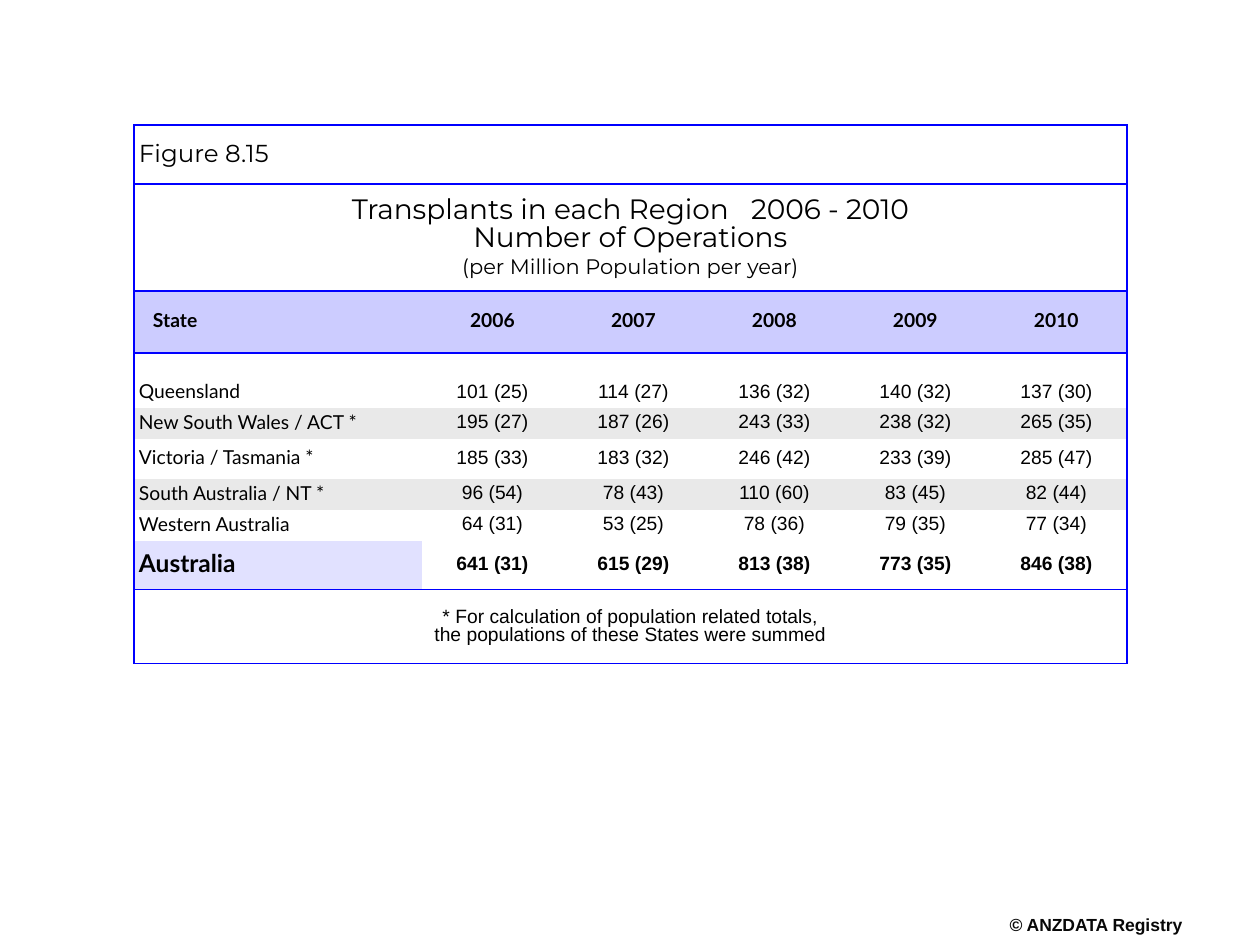
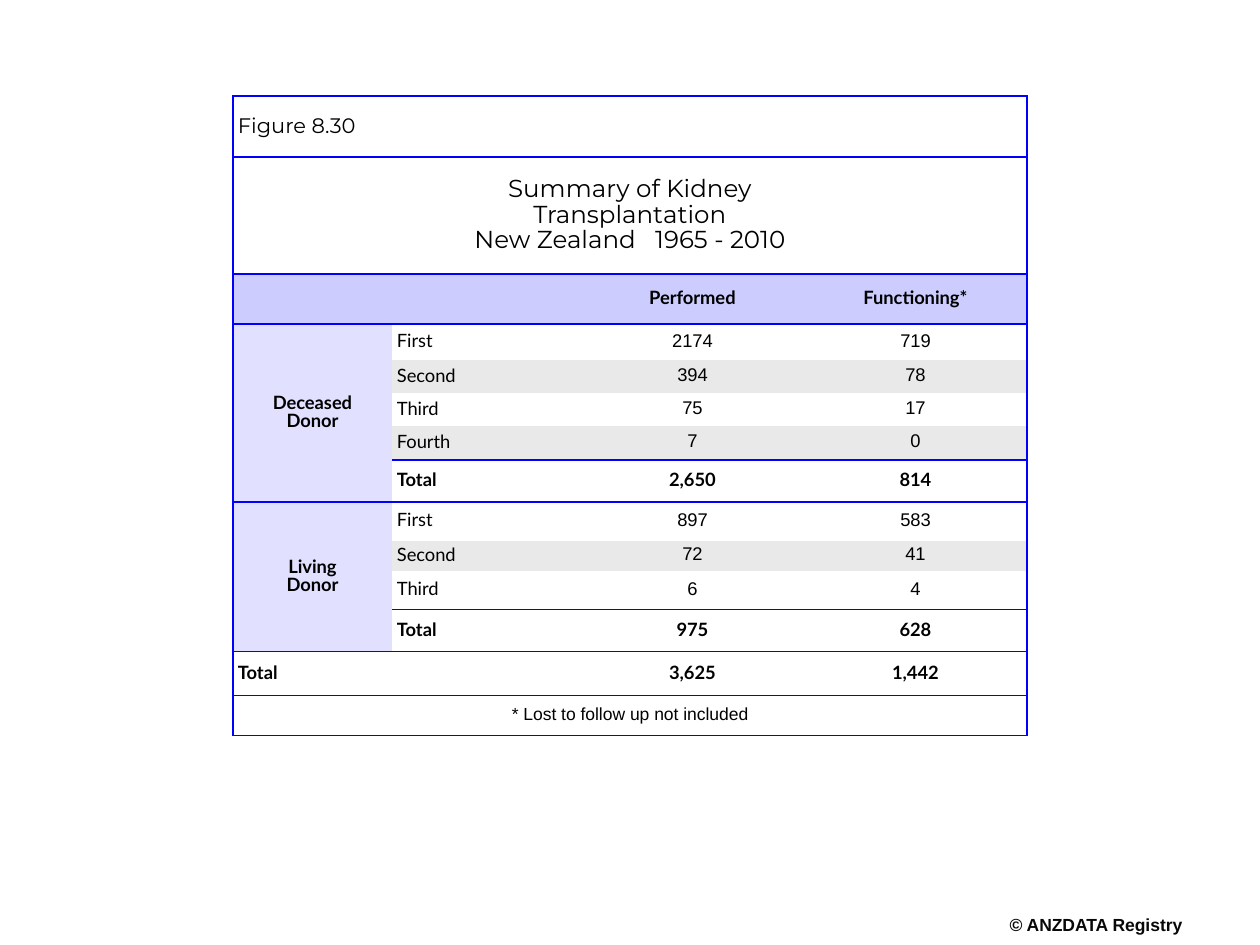
from lxml.etree import SubElement
from pptx import Presentation
from pptx.dml.color import RGBColor
from pptx.enum.text import MSO_ANCHOR as Anchor, PP_ALIGN as Align
from pptx.oxml.ns import qn
from pptx.util import Pt

# Shared look
BLUE = RGBColor(0x00, 0x00, 0xFF)
HEADER_FILL = RGBColor(0xCC, 0xCC, 0xFF)
LABEL_FILL = RGBColor(0xE1, 0xE1, 0xFF)
BAND_FILL = RGBColor(0xE9, 0xE9, 0xE9)
BLACK = RGBColor(0x00, 0x00, 0x00)
FOOTER_INK = RGBColor(0x08, 0x08, 0x08)
EMU_PER_PX = 914400 / 126
PLAIN_TABLE = "{2D5ABB26-0587-4C30-8999-92F81FD0307C}"
FOOTER = "© ANZDATA Registry"
FOOTER_BOX = (1007, 917, 178, 22)
SIDE_MARGIN, END_MARGIN = 5, 2
FULL_WIDTH = ("figure", "title", "note")

# Row kinds: label font, value font, bold, fill, ruled edges
KINDS = {
    "figure": ("Montserrat", None, False, None, "TB"),
    "title": ("Montserrat", None, False, None, "TB"),
    "header": ("Lato", "Lato", True, HEADER_FILL, "TB"),
    "plain": ("Lato", "Arial", False, None, ""),
    "band": ("Lato", "Arial", False, BAND_FILL, ""),
    "region total": ("Lato", "Arial", True, None, "B"),
    "total": ("Lato", "Lato", True, None, "TB"),
    "note": ("Arial", None, False, None, "TB"),
}

# Content: each row is height, kind, cells; a cell is a text or a list of lines,
# a line may be (text, size), and "|" marks a widened space
REGIONS = {
    "left": 134, "top": 125, "columns": [288] + [141] * 5, "label column": 0,
    "sizes": {"figure": 14, "title": 16, "body": 11, "note": 11},
    "groups": [], "header indent": 14,
    "rows": [
        (59, "figure", ["Figure 8.15"]),
        (107, "title", [["Transplants in each Region|2006 - 2010", "Number of Operations",
                         ("(per Million Population per year)", 12)]]),
        (62, "header", ["State", "2006", "2007", "2008", "2009", "2010"]),
        (25, "plain", []),
        (30, "plain", ["Queensland", "101 (25)", "114 (27)", "136 (32)", "140 (32)", "137 (30)"]),
        (31, "band", ["New South Wales / ACT *", "195 (27)", "187 (26)", "243 (33)",
                      "238 (32)", "265 (35)"]),
        (40, "plain", ["Victoria / Tasmania *", "185 (33)", "183 (32)", "246 (42)",
                       "233 (39)", "285 (47)"]),
        (31, "band", ["South Australia / NT *", "96 (54)", "78 (43)", "110 (60)",
                      "83 (45)", "82 (44)"]),
        (31, "plain", ["Western Australia", "64 (31)", "53 (25)", "78 (36)", "79 (35)", "77 (34)"]),
        (49, "region total", [[("Australia", 14)], "641 (31)", "615 (29)", "813 (38)",
                              "773 (35)", "846 (38)"]),
        (74, "note", [["* For calculation of population related totals,",
                       "the populations of these States were summed"]]),
    ],
}
DONORS = {
    "left": 233, "top": 96, "columns": [159, 189, 223, 223], "label column": 1,
    "sizes": {"figure": 12, "title": 14, "body": 10.5, "note": 10},
    "groups": [(3, 7), (8, 11)], "header indent": 0,
    "rows": [
        (61, "figure", ["Figure 8.30"]),
        (117, "title", [["Summary of Kidney", "Transplantation", "New Zealand|1965 - 2010"]]),
        (50, "header", ["", "", "Performed", "Functioning*"]),
        (36, "plain", [["Deceased", "Donor"], "First", "2174", "719"]),
        (33, "band", ["", "Second", "394", "78"]),
        (33, "plain", ["", "Third", "75", "17"]),
        (34, "band", ["", "Fourth", "7", "0"]),
        (42, "total", ["", "Total", "2,650", "814"]),
        (39, "plain", [["Living", "Donor"], "First", "897", "583"]),
        (30, "band", ["", "Second", "72", "41"]),
        (39, "plain", ["", "Third", "6", "4"]),
        (42, "total", ["", "Total", "975", "628"]),
        (44, "total", ["Total", "", "3,625", "1,442"]),
        (40, "note", ["* Lost to follow up not included"]),
    ],
}


def px(length):
    return round(length * EMU_PER_PX)


def style_font(font, **values):
    color = values.pop("color", BLACK)
    for name, value in values.items():
        setattr(font, name, value)
    font.color.rgb = color


def write_cell(cell, content, font_name, size, bold, align):
    lines = content if isinstance(content, list) else [content]
    frame = cell.text_frame
    for number, line in enumerate(lines):
        text, line_size = line if isinstance(line, tuple) else (line, size)
        paragraph = frame.paragraphs[0] if number == 0 else frame.add_paragraph()
        paragraph.alignment, paragraph.line_spacing = align, 0.85
        if line_size < size:
            paragraph.space_before = paragraph.space_after = Pt(2)
        if not text:  # keeps an empty row from growing
            SubElement(paragraph._p, qn("a:endParaRPr"), sz="800")
            continue
        before, gap, after = text.partition("|")
        for part in filter(None, (before, gap, after)):
            run = paragraph.add_run()
            run.text = " " if part == "|" else part
            style_font(run.font, name=font_name, size=Pt(line_size), bold=bold)
            if part == "|":
                run._r.get_or_add_rPr().set("spc", str(round(line_size * 52)))


def rule_cell(cell, edges):
    properties = cell._tc.get_or_add_tcPr()
    for edge in "LRTB":
        if edge in edges:
            line = SubElement(properties, qn("a:ln" + edge), w=str(Pt(1)))
            fill = SubElement(line, qn("a:solidFill"))
            SubElement(fill, qn("a:srgbClr"), val=str(BLUE))


def add_summary(slide, summary):
    rows, columns, groups = summary["rows"], summary["columns"], summary["groups"]
    last = len(columns) - 1
    heights = [height for height, _, _ in rows]
    box = (summary["left"], summary["top"], sum(columns), sum(heights))
    table = slide.shapes.add_table(len(rows), len(columns), *map(px, box)).table
    table.first_row = table.horz_banding = False
    table._tbl.tblPr.find(qn("a:tableStyleId")).text = PLAIN_TABLE
    for column, width in zip(table.columns, columns):
        column.width = px(width)

    for r, (height, kind, cells) in enumerate(rows):
        table.rows[r].height = px(height)
        label_font, value_font, bold, row_fill, row_edges = KINDS[kind]
        size = summary["sizes"].get(kind, summary["sizes"]["body"])
        full = kind in FULL_WIDTH
        grouped = any(first <= r <= end for first, end in groups)
        for c in range(last + 1):
            cell = table.cell(r, c)
            in_group = grouped and c == 0
            is_label = c <= summary["label column"] and not in_group
            font_name = label_font if is_label or in_group else value_font
            align = Align.LEFT if is_label and kind not in ("title", "note") else Align.CENTER
            edges, fill = row_edges, row_fill
            if in_group:
                starts = any(r == first for first, _ in groups)
                edges, fill = "TB" if starts else edges.replace("T", ""), LABEL_FILL
            elif kind == "region total" and c == 0:
                fill = LABEL_FILL
            edges += ("L" if c == 0 else "") + ("R" if c == last or full and c == 0 else "")

            indent = summary["header indent"] if kind == "header" and c == 0 else 0
            margins = {"margin_left": SIDE_MARGIN + indent, "margin_right": SIDE_MARGIN,
                       "margin_top": END_MARGIN, "margin_bottom": END_MARGIN}
            for name, margin in margins.items():
                setattr(cell, name, px(margin))
            cell.vertical_anchor = Anchor.MIDDLE
            content = cells[c] if c < len(cells) else ""
            write_cell(cell, content, font_name, size, bold or in_group, align)
            rule_cell(cell, edges)
            if fill is None:
                cell.fill.background()
            else:
                cell.fill.solid()
                cell.fill.fore_color.rgb = fill
        if full:
            table.cell(r, 0).merge(table.cell(r, last))
    for first, end in groups:
        table.cell(first, 0).merge(table.cell(end, 0))


def add_footer(slide):
    frame = slide.shapes.add_textbox(*map(px, FOOTER_BOX)).text_frame
    frame.margin_left = frame.margin_right = frame.margin_top = frame.margin_bottom = 0
    frame.word_wrap = False
    paragraph = frame.paragraphs[0]
    paragraph.alignment, paragraph.line_spacing = Align.CENTER, 0.85
    run = paragraph.add_run()
    run.text = FOOTER
    style_font(run.font, name="Arial", size=Pt(10), bold=True, color=FOOTER_INK)


def main():
    deck = Presentation()
    deck.slide_width, deck.slide_height = px(1260), px(945)
    for summary in (REGIONS, DONORS):
        slide = deck.slides.add_slide(deck.slide_layouts[6])
        add_footer(slide)
        add_summary(slide, summary)
    deck.save("out.pptx")


if __name__ == "__main__":
    main()
